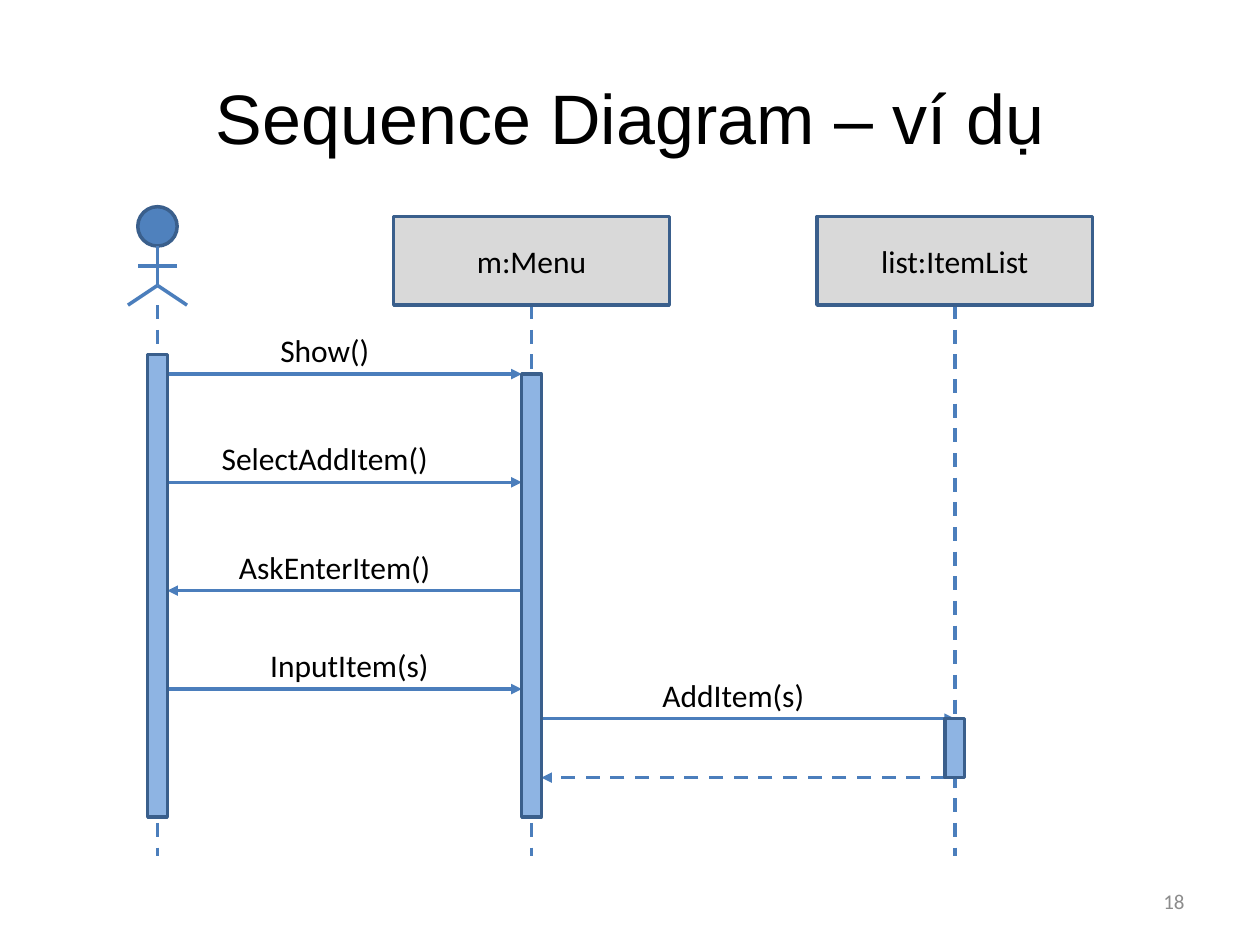
from lxml.etree import SubElement
from pptx import Presentation
from pptx.dml.color import RGBColor
from pptx.enum.dml import MSO_LINE
from pptx.enum.shapes import MSO_CONNECTOR, MSO_SHAPE
from pptx.enum.text import MSO_ANCHOR, MSO_AUTO_SIZE, PP_ALIGN
from pptx.oxml.ns import qn
from pptx.util import Inches, Pt

BLACK = RGBColor(0x00, 0x00, 0x00)
NUMBER_GRAY = RGBColor(0x8C, 0x8C, 0x8C)
HEAD_GRAY = RGBColor(0xD9, 0xD9, 0xD9)
ACTOR_BLUE = RGBColor(0x4F, 0x81, 0xBD)
BAR_BLUE = RGBColor(0x8E, 0xB4, 0xE3)
OUTLINE_BLUE = RGBColor(0x3A, 0x5F, 0x8C)
LINE_BLUE = RGBColor(0x4B, 0x7E, 0xBC)

COLUMNS, ROWS = 128, 96
USER, MENU, ITEM_LIST = 16, 54, 97  # lifeline columns
HEAD_TOP, HEAD_BOTTOM, LIFE_END = 22, 31, 87
HEAD_WIDTH, BAR_WIDTH, LABEL_HEIGHT = 28, 2, 5
BAR_HALF = BAR_WIDTH / 2


class SequenceSlide:
    """Draws on one slide; all lengths are cells of a 128 by 96 grid."""

    def __init__(self, deck):
        self.cell_width = deck.slide_width / COLUMNS
        self.cell_height = deck.slide_height / ROWS
        self.page = deck.slides.add_slide(deck.slide_layouts[5])
        self.shapes = self.page.shapes

    def spot(self, column, row):
        return round(column * self.cell_width), round(row * self.cell_height)

    def area(self, left, top, width, height):
        return (*self.spot(left, top), *self.spot(width, height))

    def put_text(self, box, text, size=18, font="Calibri", color=BLACK,
                 align=PP_ALIGN.CENTER, **frame_format):
        frame = box.text_frame
        for name, value in {"word_wrap": True, **frame_format}.items():
            setattr(frame, name, value)
        para = frame.paragraphs[0]
        para.alignment = align
        span = para.add_run()
        span.text = text
        for name, value in {"size": Pt(size), "name": font}.items():
            setattr(span.font, name, value)
        span.font.color.rgb = color

    def title(self, text, *area):
        box = self.shapes.title
        names = ("left", "top", "width", "height")
        for name, value in zip(names, self.area(*area)):
            setattr(box, name, value)
        self.put_text(box, text, size=40, font="Arial",
                      vertical_anchor=MSO_ANCHOR.MIDDLE)

    def label(self, text, *area, **text_format):
        box = self.shapes.add_textbox(*self.area(*area))
        self.put_text(box, text, **text_format)

    def shape(self, kind, fill, *area, parent=None):
        shape = (parent or self.shapes).add_shape(kind, *self.area(*area))
        shape.shadow.inherit = False
        shape.fill.solid()
        shape.fill.fore_color.rgb = fill
        shape.line.color.rgb = OUTLINE_BLUE
        shape.line.width = Pt(2)
        return shape

    def line(self, start, end, dashed=False, arrow=False, parent=None):
        line = (parent or self.shapes).add_connector(
            MSO_CONNECTOR.STRAIGHT, *self.spot(*start), *self.spot(*end))
        line.line.color.rgb = LINE_BLUE
        line.line.width = Pt(2)
        if dashed:
            line.line.dash_style = MSO_LINE.DASH
        properties = line._element.spPr
        if arrow:
            SubElement(properties.get_or_add_ln(), qn("a:tailEnd"),
                       type="triangle")
        SubElement(properties, qn("a:effectLst"))
        return line

    def actor(self, column):
        """Draws the stick figure that stands above the user's lifeline."""
        figure = self.page.shapes.add_group_shape().shapes
        self.shape(MSO_SHAPE.OVAL, ACTOR_BLUE, column - 2, 21, 4, 4,
                   parent=figure)
        hip = (column, 29)
        limbs = [
            ((column, 25), hip),
            (hip, (column + 3, HEAD_BOTTOM)),
            ((column - 3, HEAD_BOTTOM), hip),
            ((column + 2, 27), (column - 2, 27)),
        ]
        for start, end in limbs:
            self.line(start, end, parent=figure)

    def lifeline(self, column, name=None):
        line = self.line((column, HEAD_BOTTOM), (column, LIFE_END), dashed=True)
        if name:
            head = self.shape(MSO_SHAPE.RECTANGLE, HEAD_GRAY,
                              column - HEAD_WIDTH / 2, HEAD_TOP,
                              HEAD_WIDTH, HEAD_BOTTOM - HEAD_TOP)
            self.put_text(head, name, vertical_anchor=MSO_ANCHOR.MIDDLE)
            line.begin_connect(head, 2)

    def bar(self, column, top, bottom):
        self.shape(MSO_SHAPE.RECTANGLE, BAR_BLUE, column - BAR_HALF, top,
                   BAR_WIDTH, bottom - top)

    def message(self, row, start, end, text=None, left=0, width=0):
        """Draws an arrow with its label above, or a dashed reply if no text."""
        self.line((start, row), (end, row), dashed=text is None, arrow=True)
        if text:
            self.label(text, left, row - LABEL_HEIGHT, width, LABEL_HEIGHT,
                       auto_size=MSO_AUTO_SIZE.SHAPE_TO_FIT_TEXT)


def main():
    deck = Presentation()
    deck.slide_width, deck.slide_height = Inches(10), Inches(7.5)
    slide = SequenceSlide(deck)

    slide.title("Sequence Diagram – ví dụ", 6.4, 3.84, 115.2, 16)
    slide.label("18", 91.75, 89, 29.85, 5.1, size=12, color=NUMBER_GRAY,
                align=PP_ALIGN.RIGHT, vertical_anchor=MSO_ANCHOR.MIDDLE)

    slide.actor(USER)
    for column, name in [(MENU, "m:Menu"), (ITEM_LIST, "list:ItemList"),
                         (USER, None)]:
        slide.lifeline(column, name)

    menu_left, menu_right = MENU - BAR_HALF, MENU + BAR_HALF
    messages = [
        (38, USER, menu_left, "Show()", 23, 20),
        (49, USER, menu_left, "SelectAddItem()", 19, 28),
        (60, menu_left, USER + BAR_HALF, "AskEnterItem()", 19, 30),
        (70, USER, menu_left, "InputItem(s)", 23, 25),
        (73, menu_right, ITEM_LIST, "AddItem(s)", 62, 25),
        (79, ITEM_LIST - BAR_HALF, menu_right),
    ]
    for message in messages:
        slide.message(*message)

    for column, top, bottom in [(MENU, 38, 83), (ITEM_LIST, 73, 79),
                                (USER, 36, 83)]:
        slide.bar(column, top, bottom)

    deck.save("out.pptx")


if __name__ == "__main__":
    main()
